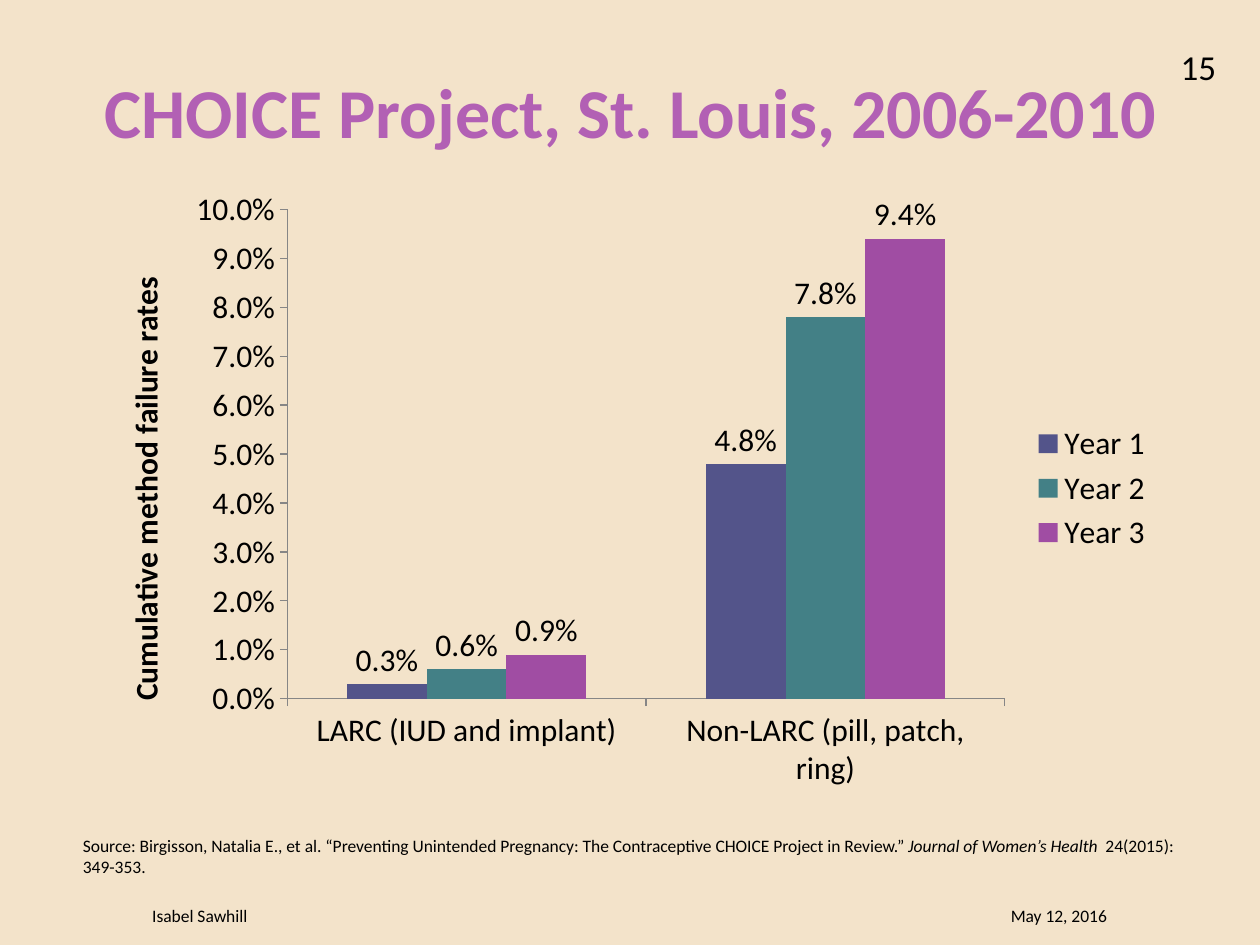
from pptx import Presentation
from pptx.chart.data import CategoryChartData
from pptx.dml.color import RGBColor
from pptx.enum.chart import XL_CHART_TYPE as ChartType
from pptx.enum.chart import XL_LABEL_POSITION as LabelPosition
from pptx.enum.chart import XL_LEGEND_POSITION as LegendPosition
from pptx.enum.chart import XL_TICK_MARK as TickMark
from pptx.enum.text import MSO_ANCHOR as Anchor
from pptx.enum.text import PP_ALIGN as Align
from pptx.oxml import parse_xml
from pptx.oxml.ns import nsdecls, qn
from pptx.util import Pt
from lxml.etree import SubElement

# Content
FONT = "Calibri"
COLORS = {"background": "F3E3CA", "text": "000000", "title": "B260B4", "axis": "868686"}
TITLE = "CHOICE Project, St. Louis, 2006-2010"
PAGE_NUMBER = "15"
AUTHOR, DATE = "Isabel Sawhill", "May 12, 2016"
SOURCE = [
    ("Source: Birgisson, Natalia E., et al. “Preventing Unintended Pregnancy: "
     "The Contraceptive CHOICE Project in Review.” ", False),
    ("Journal of Women’s Health ", True),
    (" 24(2015): 349-353.", False),
]
AXIS_TITLE = "Cumulative method failure rates"
CATEGORIES = ["LARC (IUD and implant)", "Non-LARC (pill, patch, ring)"]
SERIES = [
    ("Year 1", (0.003, 0.048), "53548A"),
    ("Year 2", (0.006, 0.078), "438086"),
    ("Year 3", (0.009, 0.094), "A04DA3"),
]
PERCENT = "0.0%"
PLOT_AREA = {"x": 0.18, "y": 0.05, "w": 0.67, "h": 0.79}  # fractions of the chart


def rgb(value):
    return RGBColor.from_string(value)


def style(font, size, color=COLORS["text"], bold=False, italic=False):
    font.name, font.size = FONT, Pt(size)
    font.bold, font.italic = bold, italic
    font.color.rgb = rgb(color)


def add_run(para, text, size, **look):
    span = para.add_run()
    span.text = text
    style(span.font, size, **look)


def add_box(page, left, top, width, height, anchor=Anchor.MIDDLE):
    box = page.shapes.add_textbox(Pt(left), Pt(top), Pt(width), Pt(height))
    box.text_frame.word_wrap = True
    box.text_frame.vertical_anchor = anchor
    return box.text_frame


def add_title(page):
    title = page.shapes.title
    title.left, title.top, title.width, title.height = Pt(50.4), Pt(36), Pt(620), Pt(54)
    frame = title.text_frame
    frame.word_wrap = True
    frame.vertical_anchor = Anchor.BOTTOM
    frame.margin_left = frame.margin_right = Pt(3)
    frame.margin_top = frame.margin_bottom = Pt(3)
    para = frame.paragraphs[0]
    para.alignment = Align.CENTER
    add_run(para, TITLE, 40, color=COLORS["title"], bold=True)


def add_chart(page):
    data = CategoryChartData(number_format=PERCENT)
    data.categories = CATEGORIES
    for name, values, _ in SERIES:
        data.add_series(name, values)
    chart = page.shapes.add_chart(
        ChartType.COLUMN_CLUSTERED, Pt(54), Pt(102), Pt(612), Pt(354), data).chart
    chart.has_title = False
    style(chart.font, 18)

    # Columns and their labels
    plot = chart.plots[0]
    plot.gap_width, plot.overlap, plot.vary_by_categories = 150, 0, False
    for series, (_, _, color) in zip(plot.series, SERIES):
        series.format.fill.solid()
        series.format.fill.fore_color.rgb = rgb(color)
        labels = series.data_labels
        labels.show_value = True
        labels.position = LabelPosition.OUTSIDE_END
        labels.number_format, labels.number_format_is_linked = PERCENT, False
        style(labels.font, 18)

    # Axes
    for axis in (chart.category_axis, chart.value_axis):
        axis.has_major_gridlines = False
        axis.major_tick_mark = TickMark.OUTSIDE
        axis.format.line.color.rgb = rgb(COLORS["axis"])
        axis.format.line.width = Pt(0.75)
        style(axis.tick_labels.font, 18)
    values = chart.value_axis
    values.minimum_scale, values.maximum_scale, values.major_unit = 0, 0.1, 0.01
    values.tick_labels.number_format = PERCENT
    values.tick_labels.number_format_is_linked = False
    add_run(values.axis_title.text_frame.paragraphs[0], AXIS_TITLE, 18, bold=True)

    # Legend
    chart.has_legend = True
    chart.legend.position = LegendPosition.RIGHT
    chart.legend.include_in_layout = False
    style(chart.legend.font, 18)

    # Fixed plot area
    area = chart.element.find(".//" + qn("c:plotArea"))
    for old in area.findall(qn("c:layout")):
        area.remove(old)
    layout = parse_xml(f"<c:layout {nsdecls('c')}><c:manualLayout/></c:layout>")
    settings = {"layoutTarget": "inner", "xMode": "edge", "yMode": "edge", **PLOT_AREA}
    for tag, value in settings.items():
        SubElement(layout[0], qn(f"c:{tag}")).set("val", str(value))
    area.insert(0, layout)


def add_footer(page):
    frame = add_box(page, 54, 512.6, 612, 21.6)
    frame.margin_left = Pt(33)
    para = frame.paragraphs[0]
    tabs = SubElement(para._p.get_or_add_pPr(), qn("a:tabLst"))
    tab = SubElement(tabs, qn("a:tab"))
    tab.set("pos", str(Pt(545.5)))
    tab.set("algn", "r")
    add_run(para, f"{AUTHOR}\t{DATE}", 10)


def main():
    deck = Presentation()
    deck.slide_width, deck.slide_height = Pt(720), Pt(540)
    page = deck.slides.add_slide(deck.slide_layouts[5])
    page.background.fill.solid()
    page.background.fill.fore_color.rgb = rgb(COLORS["background"])

    add_title(page)
    add_chart(page)

    # Page number
    number = add_box(page, 534.2, 23.8, 167.8, 28.8).paragraphs[0]
    number.alignment = Align.RIGHT
    add_run(number, PAGE_NUMBER, 20)

    # Source note
    note = add_box(page, 40.3, 473.8, 638.6, 36, Anchor.TOP).paragraphs[0]
    for text, italic in SOURCE:
        add_run(note, text, 10, italic=italic)

    add_footer(page)
    deck.save("out.pptx")


if __name__ == "__main__":
    main()
